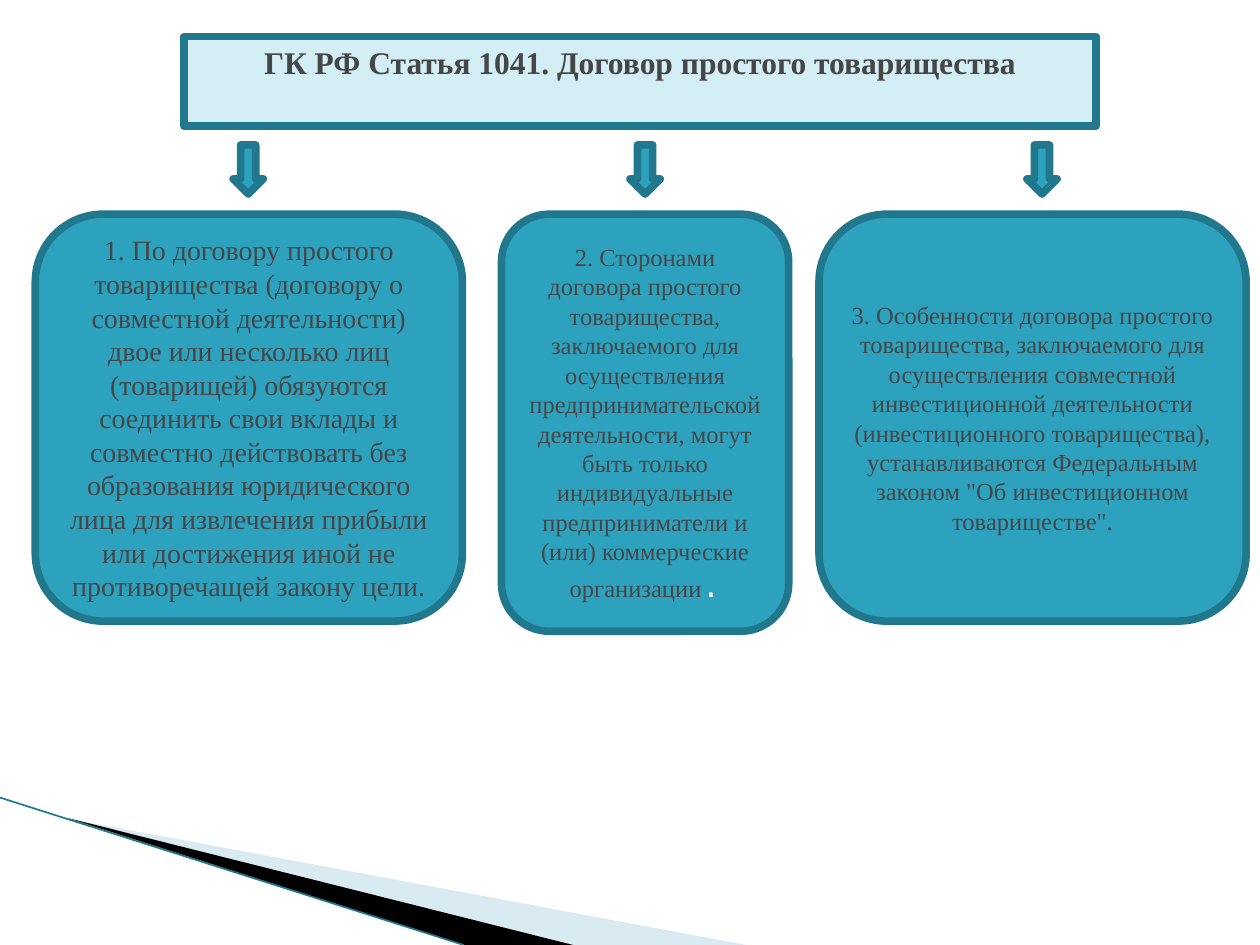
import pptx
import pptx.dml.color
import pptx.enum.shapes
import pptx.enum.text
import pptx.oxml
import pptx.oxml.ns
import pptx.util
from pptx.util import Inches

SHAPES = pptx.enum.shapes.MSO_SHAPE
ANCHOR = pptx.enum.text.MSO_ANCHOR
CENTER = pptx.enum.text.PP_ALIGN.CENTER
SERIF = "Times New Roman"
TEAL, DARK_TEAL, PALE_TEAL = "2DA2BF", "21788D", "D3EEF5"
TEXT_GRAY = "464646"

HEADING = "ГК РФ Статья 1041. Договор простого товарищества"
CLAUSES = [
    ((0.28, 1.7, 3.39, 3.23), 16,
     "1. По договору простого товарищества (договору о совместной деятельности) "
     "двое или несколько лиц (товарищей) обязуются соединить свои вклады и "
     "совместно действовать без образования юридического лица для извлечения "
     "прибыли или достижения иной не противоречащей закону цели.", ""),
    ((3.98, 1.7, 2.28, 3.31), 14,
     "2. Сторонами договора простого товарищества, заключаемого для "
     "осуществления предпринимательской деятельности, могут быть только "
     "индивидуальные предприниматели и (или) коммерческие организации", "."),
    ((6.5, 1.7, 3.39, 3.23), 14,
     "3. Особенности договора простого товарищества, заключаемого для "
     "осуществления совместной инвестиционной деятельности (инвестиционного "
     "товарищества), устанавливаются Федеральным законом \"Об "
     "инвестиционном товариществе\".", ""),
]


def rgb(value):
    return pptx.dml.color.RGBColor.from_string(value)


def set_font(font, size, color, name=SERIF, bold=False):
    font.size = pptx.util.Pt(size)
    font.name = name
    font.bold = bold
    font.color.rgb = rgb(color)


def paint(shape, fill):
    shape.fill.solid()
    shape.fill.fore_color.rgb = rgb(fill)
    shape.line.color.rgb = rgb(DARK_TEAL)
    shape.line.width = pptx.util.Pt(4.33)


def add_preset(slide, preset, box):
    shape = slide.shapes.add_shape(preset, *map(Inches, box))
    shape.shadow.inherit = False
    paint(shape, TEAL)
    return shape


def add_wedge(slide, points, fill, opacity=100):
    corners = [(Inches(x), Inches(y)) for x, y in points]
    builder = slide.shapes.build_freeform(*corners[0])
    builder.add_line_segments(corners[1:])
    wedge = builder.convert_to_shape()
    wedge.shadow.inherit = False
    wedge.fill.solid()
    wedge.fill.fore_color.rgb = rgb(fill)
    wedge.line.fill.background()
    if opacity < 100:
        color = wedge.fill._xPr.find(".//" + pptx.oxml.ns.qn("a:srgbClr"))
        alpha = pptx.oxml.parse_xml(
            f'<a:alpha {pptx.oxml.ns.nsdecls("a")} val="{opacity * 1000}"/>')
        color.append(alpha)


def add_corner(slide, box):
    left, top, width, height = box
    bottom = top + height
    add_wedge(slide, [(left + 0.55, top + 0.17), (left + width, bottom),
                      (left + 4.56, bottom)], "A0CBDC", 40)
    add_wedge(slide, [(left + 0.53, top + 0.16), (left + 4.55, bottom),
                      (left + 3.69, bottom)], "000000")
    edge = slide.shapes.add_connector(
        pptx.enum.shapes.MSO_CONNECTOR.STRAIGHT,
        Inches(left), Inches(top), Inches(left + 3.68), Inches(bottom))
    edge.line.color.rgb = rgb(DARK_TEAL)
    edge.line.width = pptx.util.Pt(0.95)
    edge._element.spPr.append(
        pptx.oxml.parse_xml(f'<a:effectLst {pptx.oxml.ns.nsdecls("a")}/>'))


def place_heading(slide, box):
    heading = slide.shapes.title
    heading.left, heading.top, heading.width, heading.height = map(Inches, box)
    heading._element.spPr.append(pptx.oxml.parse_xml(
        f'<a:prstGeom {pptx.oxml.ns.nsdecls("a")} prst="roundRect"><a:avLst/></a:prstGeom>'))
    paint(heading, PALE_TEAL)
    frame = heading.text_frame
    frame.text = HEADING
    frame.word_wrap = True
    frame.auto_size = pptx.enum.text.MSO_AUTO_SIZE.NONE
    frame.vertical_anchor = ANCHOR.TOP
    paragraph = frame.paragraphs[0]
    paragraph.alignment = CENTER
    set_font(paragraph.font, 18, TEXT_GRAY, bold=True)


def add_arrows(slide, box, count, pitch):
    left, top, width, height = box
    for index in range(count):
        add_preset(slide, SHAPES.DOWN_ARROW,
                   (left + index * pitch, top, width, height))


def add_clause(slide, box, size, text, full_stop):
    clause = add_preset(slide, SHAPES.ROUNDED_RECTANGLE, box)
    frame = clause.text_frame
    frame.word_wrap = True
    frame.vertical_anchor = ANCHOR.MIDDLE
    paragraph = frame.paragraphs[0]
    paragraph.alignment = CENTER
    set_font(paragraph.font, size, TEXT_GRAY)
    paragraph.add_run().text = text
    if full_stop:
        stop = paragraph.add_run()
        stop.text = full_stop
        set_font(stop.font, 18, "FFFFFF", "Courier New")


def main():
    deck = pptx.Presentation()
    deck.slide_width, deck.slide_height = Inches(10), Inches(7.5)
    slide = deck.slides.add_slide(deck.slide_layouts[5])
    add_corner(slide, (0, 6.33, 5.92, 1.17))
    place_heading(slide, (1.46, 0.29, 7.24, 0.71))
    add_arrows(slide, (1.85, 1.15, 0.24, 0.39), len(CLAUSES), 3.15)
    for box, size, text, full_stop in CLAUSES:
        add_clause(slide, box, size, text, full_stop)
    deck.save("out.pptx")


if __name__ == "__main__":
    main()
